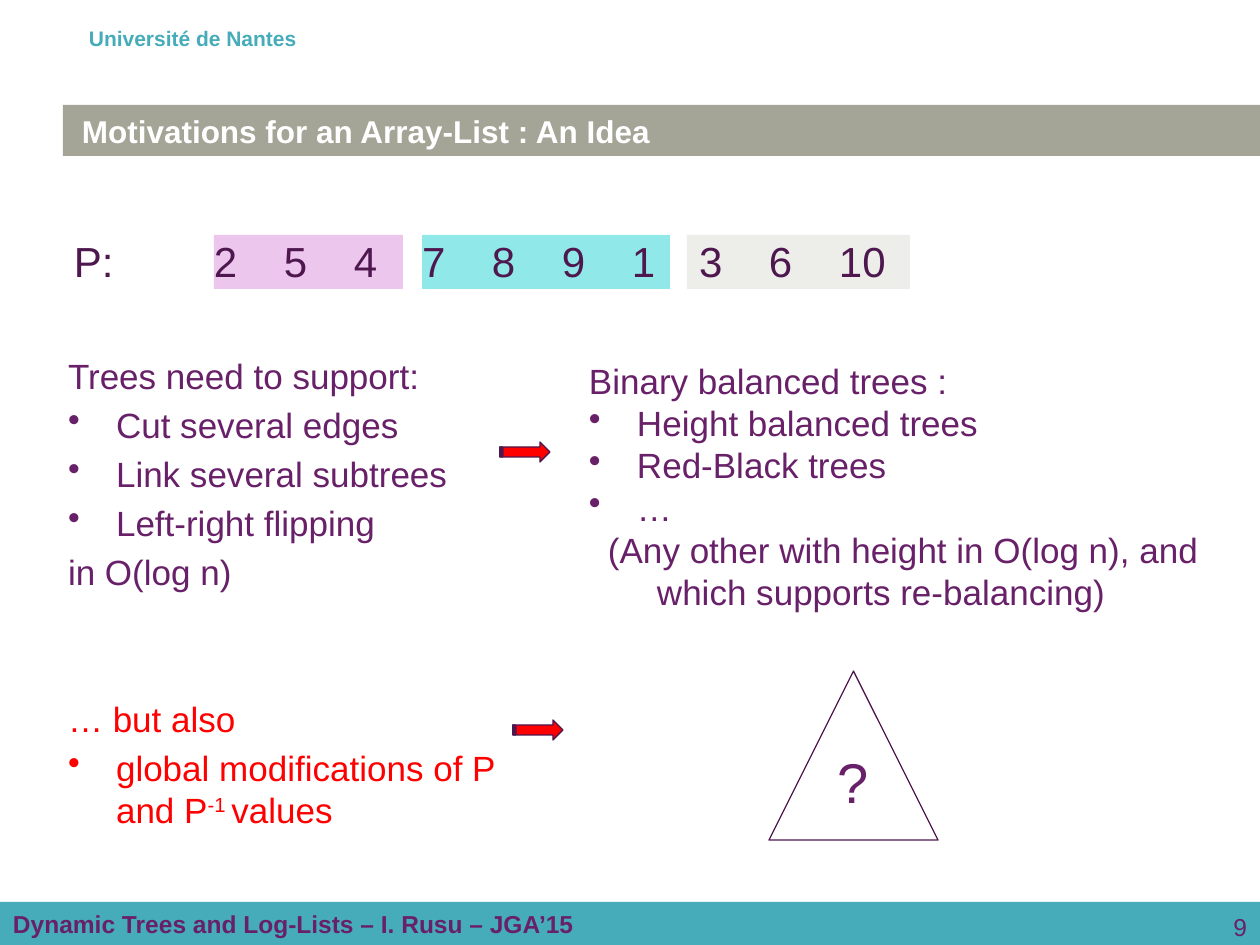
import pptx
import pptx.util
import pptx.dml.color
import pptx.enum.shapes
import pptx.enum.text
import pptx.oxml.ns
from lxml import etree

RGBColor = pptx.dml.color.RGBColor
KIND = pptx.enum.shapes.MSO_SHAPE
ALIGN = pptx.enum.text.PP_ALIGN
ANCHOR = pptx.enum.text.MSO_ANCHOR

WHITE = RGBColor(0xFF, 0xFF, 0xFF)
PLUM = RGBColor(0x68, 0x20, 0x69)
DARK = RGBColor(0x4E, 0x18, 0x4F)
TEAL = RGBColor(0x46, 0xAC, 0xBA)
STONE = RGBColor(0xA4, 0xA5, 0x97)
PINK = RGBColor(0xED, 0xC6, 0xEE)
AQUA = RGBColor(0x90, 0xE8, 0xE8)
PALE = RGBColor(0xED, 0xED, 0xEA)
RED = RGBColor(0xFF, 0x00, 0x00)

SCALE = 914400 / 126
HANG = 48
STEP = 70


def px(n):
    return pptx.util.Emu(round(n * SCALE))


def setup(shape, pad, anchor=ANCHOR.TOP):
    frame = shape.text_frame
    frame.word_wrap = True
    frame.vertical_anchor = anchor
    frame.margin_left = frame.margin_right = px(pad[0])
    frame.margin_top = frame.margin_bottom = px(pad[1])
    return frame


def label(slide, box, pad=(13, 6)):
    return setup(slide.shapes.add_textbox(*map(px, box)), pad)


def solid(slide, kind, box, fill=None, line=None):
    shape = slide.shapes.add_shape(kind, *map(px, box))
    shape.shadow.inherit = False
    if fill is None:
        shape.fill.background()
    else:
        shape.fill.solid()
        shape.fill.fore_color.rgb = fill
    if line is None:
        shape.line.fill.background()
    else:
        shape.line.color.rgb = line
        shape.line.width = pptx.util.Pt(0.75)
    return shape


def write(para, text, size, color, bold=False, lift=False):
    run = para.add_run()
    run.text = text
    run.font.name = "Arial"
    run.font.size = pptx.util.Pt(size)
    run.font.bold = bold
    run.font.color.rgb = color
    if lift:
        run.font._element.set("baseline", "30000")


def line(frame, first, gap=0, align=ALIGN.LEFT):
    para = frame.paragraphs[0] if first else frame.add_paragraph()
    para.alignment = align
    if gap and not first:
        para.space_before = pptx.util.Pt(gap)
    return para


def indent(para, left, bullet=False):
    props = para._p.get_or_add_pPr()
    props.set("marL", str(px(left)))
    props.set("indent", str(px(-left if bullet else 0)))
    if bullet:
        mark = etree.SubElement(props, pptx.oxml.ns.qn("a:buChar"))
        mark.set("char", "•")


def tabs(para, count):
    props = para._p.get_or_add_pPr()
    stops = etree.SubElement(props, pptx.oxml.ns.qn("a:tabLst"))
    for i in range(1, count + 1):
        stop = etree.SubElement(stops, pptx.oxml.ns.qn("a:tab"))
        stop.set("pos", str(px(i * STEP)))
        stop.set("algn", "l")


def header(slide, box):
    para = line(label(slide, box), True)
    indent(para, 76)
    write(para, "Université de Nantes", 12, TEAL, True)


def title(slide, box):
    bar = solid(slide, KIND.RECTANGLE, box, STONE)
    para = line(setup(bar, (19, 6), ANCHOR.MIDDLE), True)
    write(para, "Motivations for an Array-List : An Idea", 18, WHITE, True)


def footer(slide, box):
    x, y, w, h = box
    bar = solid(slide, KIND.RECTANGLE, box, TEAL)
    para = line(setup(bar, (13, 6), ANCHOR.MIDDLE), True)
    write(para, "Dynamic Trees and Log-Lists – I. Rusu – JGA’15", 14, PLUM, True)
    page = label(slide, (x + w - 294, y + 4, 294, h - 4))
    write(line(page, True, align=ALIGN.RIGHT), "9", 14, PLUM)


def array(slide, box):
    x, y, w, h = box
    write(line(label(slide, (x, y, 140, h), (0, 0)), True), "P:", 24, DARK)
    parts = [
        (140, 189, 0, PINK, (2, 5, 4)),
        (348, 248, 0, AQUA, (7, 8, 9, 1)),
        (613, 223, 12, PALE, (3, 6, 10)),
    ]
    for left, wide, pad, fill, nums in parts:
        cell = solid(slide, KIND.RECTANGLE, (x + left, y, wide, h), fill)
        frame = setup(cell, (0, 0))
        frame.margin_left = px(pad)
        para = line(frame, True)
        tabs(para, len(nums) - 1)
        write(para, "\t".join(map(str, nums)), 24, DARK)


def needs(slide, box):
    frame = label(slide, box, (0, 0))
    items = [
        ("Trees need to support:", False, 0, PLUM),
        ("Cut several edges", True, 4, PLUM),
        ("Link several subtrees", True, 4, PLUM),
        ("Left-right flipping", True, 4, PLUM),
        ("in O(log n)", False, 4, PLUM),
        ("… but also", False, 60, RED),
        ("global modifications of P and P", True, 4, RED),
    ]
    for i, (text, bullet, gap, color) in enumerate(items):
        para = line(frame, i == 0, gap)
        indent(para, HANG if bullet else 0, bullet)
        write(para, text, 20, color)
    write(para, "-1 ", 20, RED, lift=True)
    write(para, "values", 20, RED)


def trees(slide, box):
    frame = label(slide, box)
    items = [
        ("Binary balanced trees :", 0, False),
        ("Height balanced trees", HANG, True),
        ("Red-Black trees", HANG, True),
        ("…", HANG, True),
        ("(Any other with height in O(log n), and", 19, False),
        ("which supports re-balancing)", 68, False),
    ]
    for i, (text, left, bullet) in enumerate(items):
        para = line(frame, i == 0)
        indent(para, left, bullet)
        write(para, text, 20, PLUM)


def arrow(slide, box):
    solid(slide, KIND.STRIPED_RIGHT_ARROW, box, RED, DARK)


def puzzle(slide, box):
    x, y, w, h = box
    solid(slide, KIND.ISOSCELES_TRIANGLE, box, line=DARK)
    mark = label(slide, (x + 56, y + 70, 57, 81))
    write(line(mark, True), "?", 32, PLUM)


def main():
    deck = pptx.Presentation()
    deck.slide_width = px(1260)
    deck.slide_height = px(945)
    slide = deck.slides.add_slide(deck.slide_layouts[6])
    header(slide, (0, 20, 1260, 38))
    footer(slide, (0, 902, 1260, 43))
    title(slide, (63, 105, 1197, 51))
    array(slide, (74, 235, 836, 54))
    needs(slide, (68, 354, 432, 486))
    trees(slide, (576, 354, 639, 305))
    arrow(slide, (500, 442, 50, 20))
    arrow(slide, (513, 720, 50, 20))
    puzzle(slide, (769, 671, 169, 169))
    deck.save("out.pptx")


if __name__ == "__main__":
    main()
